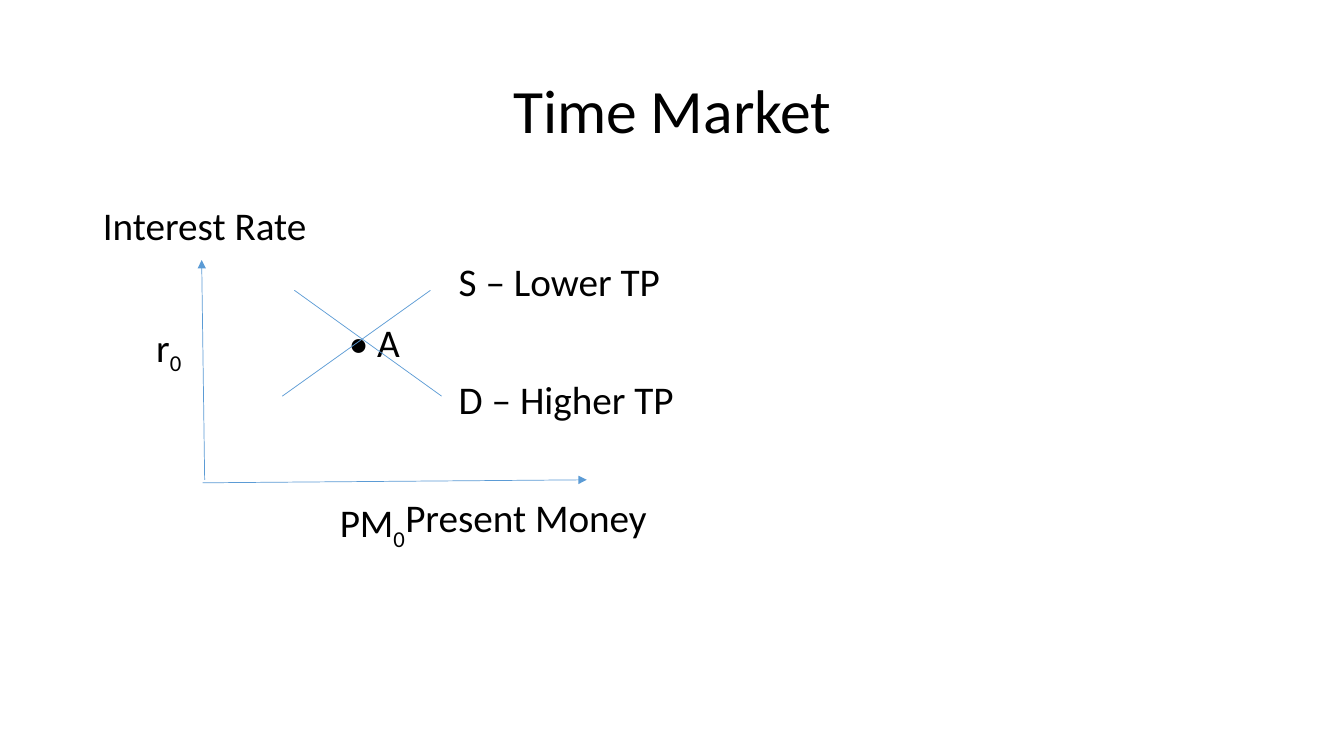
import pptx
import pptx.dml.color
import pptx.enum.shapes
import pptx.enum.text
import pptx.oxml.ns
import pptx.util
from lxml import etree

Inches = pptx.util.Inches
ALIGN = pptx.enum.text.PP_ALIGN
ANCHOR = pptx.enum.text.MSO_ANCHOR
COLORS = {"text": "000000", "line": "5B9BD5"}


def rgb(name):
    return pptx.dml.color.RGBColor.from_string(COLORS[name])


def write(p, text, font="Calibri", size=28, color="text", subscript=False):
    r = p.add_run()
    r.text = text
    r.font.name = font
    r.font.size = pptx.util.Pt(size)
    r.font.color.rgb = rgb(color)
    if subscript:
        r.font._element.set("baseline", "-25000")


class Diagram:
    def __init__(self, prs):
        self.s = prs.slides.add_slide(prs.slide_layouts[6])

    def label(self, text, left, top, width, height=0.45, sub="",
              size=28, align=ALIGN.LEFT, anchor=ANCHOR.TOP):
        sp = self.s.shapes.add_textbox(
            Inches(left), Inches(top), Inches(width), Inches(height))
        tf = sp.text_frame
        tf.word_wrap = True
        tf.vertical_anchor = anchor
        tf.margin_left = tf.margin_right = 0
        tf.margin_top = tf.margin_bottom = 0
        p = tf.paragraphs[0]
        p.alignment = align
        p.line_spacing = 0.9
        write(p, text, size=size)
        if sub:
            write(p, sub, size=size, subscript=True)

    def line(self, start, end, arrow=False):
        cx = self.s.shapes.add_connector(
            pptx.enum.shapes.MSO_CONNECTOR.STRAIGHT,
            *map(Inches, start + end))
        cx.line.color.rgb = rgb("line")
        cx.line.width = pptx.util.Pt(0.5)
        qn = pptx.oxml.ns.qn
        if arrow:
            etree.SubElement(cx.line._get_or_add_ln(), qn("a:tailEnd"), type="triangle")
        etree.SubElement(cx._element.spPr, qn("a:effectLst"))


def main():
    prs = pptx.Presentation()
    prs.slide_width, prs.slide_height = Inches(13.33), Inches(7.5)
    market = Diagram(prs)

    market.label("Time Market", 0.92, 0.4, 11.5, 1.45, size=44,
                 align=ALIGN.CENTER, anchor=ANCHOR.MIDDLE)
    market.label("Interest Rate", 1.02, 2.05, 2.5)
    market.label("S – Lower TP", 4.55, 2.61, 2.5)
    market.label("r", 1.55, 3.21, 0.4, sub="0")
    market.label("• A", 3.46, 3.21, 0.8)
    market.label("D – Higher TP", 4.55, 3.78, 2.5)
    market.label("PM", 3.37, 4.95, 0.8, sub="0")
    market.label("Present Money", 4.02, 4.95, 2.8)

    market.line((2.03, 4.76), (2, 2.58), arrow=True)
    market.line((2.01, 4.79), (5.82, 4.76), arrow=True)
    market.line((2.92, 2.88), (4.38, 3.93))
    market.line((2.8, 3.93), (4.27, 2.88))
    prs.save("out.pptx")


if __name__ == "__main__":
    main()
